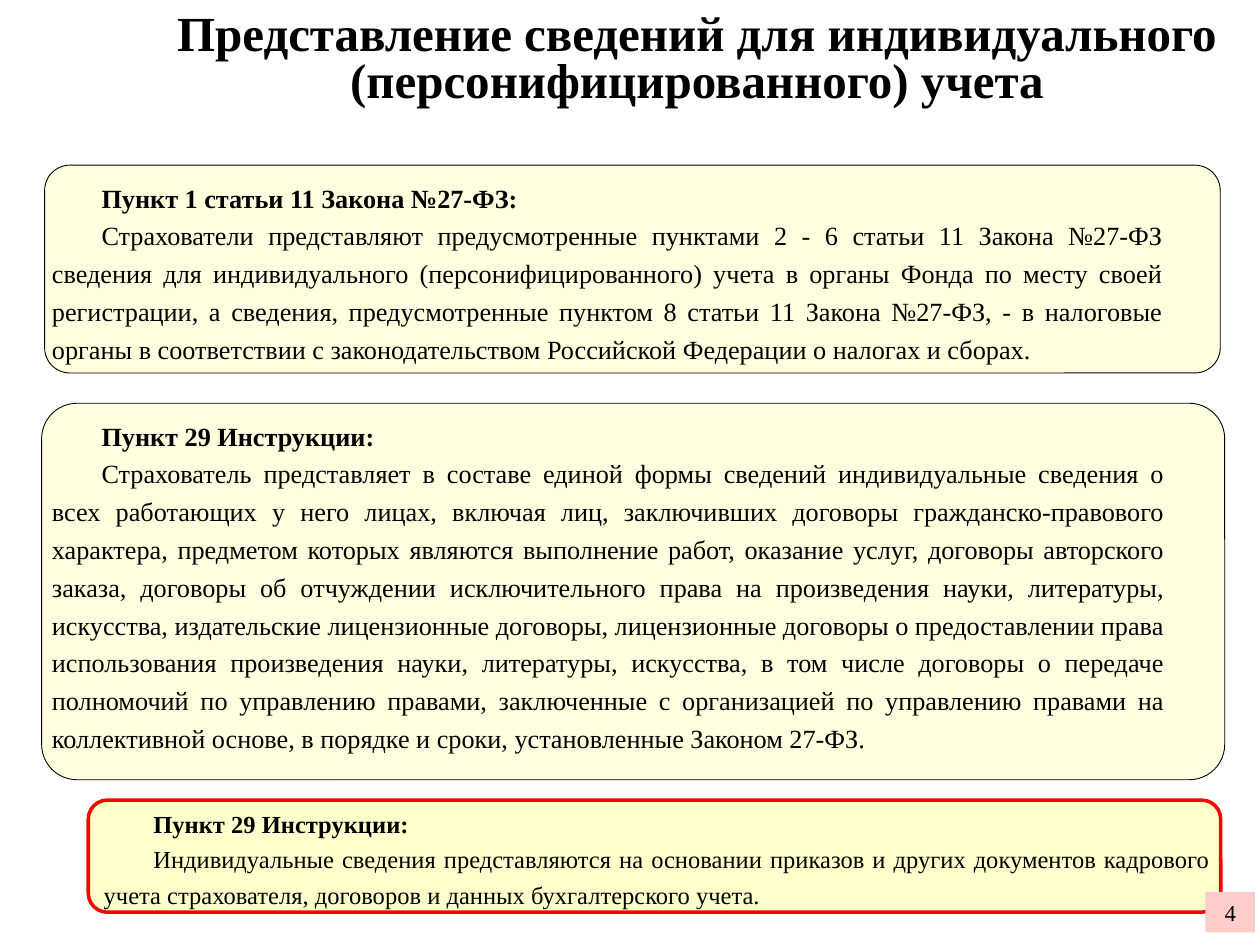
"""Build a slide on reporting data for individual (personified) records."""
from lxml import etree
from pptx import Presentation
from pptx.dml.color import RGBColor
from pptx.enum.shapes import MSO_SHAPE as Shape
from pptx.enum.text import MSO_ANCHOR as Anchor, PP_ALIGN as Align
from pptx.oxml.ns import qn
from pptx.util import Cm, Pt

BLACK = RGBColor(0x00, 0x00, 0x00)
RED = RGBColor(0xFF, 0x00, 0x00)
CREAM = RGBColor(0xFF, 0xFF, 0xCC)
PINK = RGBColor(0xFF, 0xCC, 0xCC)
FONT = "Times New Roman"
INDENT = Cm(1)


def write(para, text, size, bold=False, align=Align.CENTER, spacing=1.0, indent=0):
    if indent:
        properties = para._p.get_or_add_pPr()
        properties.set("marL", "0")
        properties.set("indent", str(indent))
    para.alignment = align
    para.line_spacing = spacing
    span = para.add_run()
    span.text = text
    span.font.name = FONT
    span.font.size = Pt(size)
    span.font.bold = bold
    span.font.color.rgb = BLACK


deck = Presentation()
deck.slide_width, deck.slide_height = Cm(25.4), Cm(19.05)
page = deck.slides.add_slide(deck.slide_layouts[6])

title = page.shapes.add_textbox(Cm(3), Cm(0.33), Cm(22.1), Cm(1.8))
title.text_frame.word_wrap = True
title.text_frame.vertical_anchor = Anchor.MIDDLE
write(
    title.text_frame.paragraphs[0],
    "Представление сведений для индивидуального (персонифицированного) учета",
    size=28, bold=True, spacing=0.8,
)

WIDE_INSETS = (0, 0, 1, 0)
SLIM_INSETS = (0.2, 0.1, 0.1, 0.1)
panels = [
    dict(
        place=(0.9, 3.33, 23.7, 4.19), corner=0.122, opacity=60, line=(BLACK, 0.5),
        anchor=Anchor.TOP, insets=WIDE_INSETS, size=15,
        heading="Пункт 1 статьи 11 Закона №27-ФЗ:", heading_align=Align.LEFT, heading_spacing=1.3,
        body="Страхователи представляют предусмотренные пунктами 2 - 6 статьи 11 Закона №27-ФЗ "
             "сведения для индивидуального (персонифицированного) учета в органы Фонда по месту "
             "своей регистрации, а сведения, предусмотренные пунктом 8 статьи 11 Закона №27-ФЗ, "
             "- в налоговые органы в соответствии с законодательством Российской Федерации "
             "о налогах и сборах.",
    ),
    dict(
        place=(1.78, 16.13, 22.83, 2.26), corner=0.17, opacity=100, line=(RED, 2),
        anchor=Anchor.MIDDLE, insets=SLIM_INSETS, size=14,
        heading="Пункт 29 Инструкции:", heading_align=Align.JUSTIFY, heading_spacing=1.2,
        body="Индивидуальные сведения представляются на основании приказов и других документов "
             "кадрового учета страхователя, договоров и данных бухгалтерского учета.",
    ),
    dict(
        place=(0.84, 8.13, 23.85, 7.59), corner=0.094, opacity=60, line=(BLACK, 0.5),
        anchor=Anchor.TOP, insets=WIDE_INSETS, size=15,
        heading="Пункт 29 Инструкции:", heading_align=Align.JUSTIFY, heading_spacing=1.2,
        body="Страхователь представляет в составе единой формы сведений индивидуальные сведения "
             "о всех работающих у него лицах, включая лиц, заключивших договоры "
             "гражданско-правового характера, предметом которых являются выполнение работ, "
             "оказание услуг, договоры авторского заказа, договоры об отчуждении исключительного "
             "права на произведения науки, литературы, искусства, издательские лицензионные "
             "договоры, лицензионные договоры о предоставлении права использования произведения "
             "науки, литературы, искусства, в том числе договоры о передаче полномочий по "
             "управлению правами, заключенные с организацией по управлению правами на "
             "коллективной основе, в порядке и сроки, установленные Законом 27-ФЗ.",
    ),
]

for panel in panels:
    box = page.shapes.add_shape(Shape.ROUNDED_RECTANGLE, *map(Cm, panel["place"]))
    box.shadow.inherit = False
    box.adjustments[0] = panel["corner"]
    box.fill.solid()
    box.fill.fore_color.rgb = CREAM
    if panel["opacity"] < 100:
        color = box._element.spPr.find(qn("a:solidFill")).find(qn("a:srgbClr"))
        etree.SubElement(color, qn("a:alpha")).set("val", str(panel["opacity"] * 1000))
    line_color, line_width = panel["line"]
    box.line.color.rgb = line_color
    box.line.width = Pt(line_width)

    frame = box.text_frame
    frame.word_wrap = True
    frame.vertical_anchor = panel["anchor"]
    frame.margin_left, frame.margin_top, frame.margin_right, frame.margin_bottom = map(Cm, panel["insets"])
    write(
        frame.paragraphs[0], panel["heading"], size=panel["size"], bold=True,
        align=panel["heading_align"], spacing=panel["heading_spacing"], indent=INDENT,
    )
    write(
        frame.add_paragraph(), panel["body"], size=panel["size"],
        align=Align.JUSTIFY, spacing=1.2, indent=INDENT,
    )

number = page.shapes.add_shape(Shape.RECTANGLE, Cm(24.3), Cm(17.98), Cm(1), Cm(0.82))
number.shadow.inherit = False
number.fill.solid()
number.fill.fore_color.rgb = PINK
number.line.fill.background()
number.text_frame.vertical_anchor = Anchor.MIDDLE
write(number.text_frame.paragraphs[0], "4", size=13)

deck.save("out.pptx")
